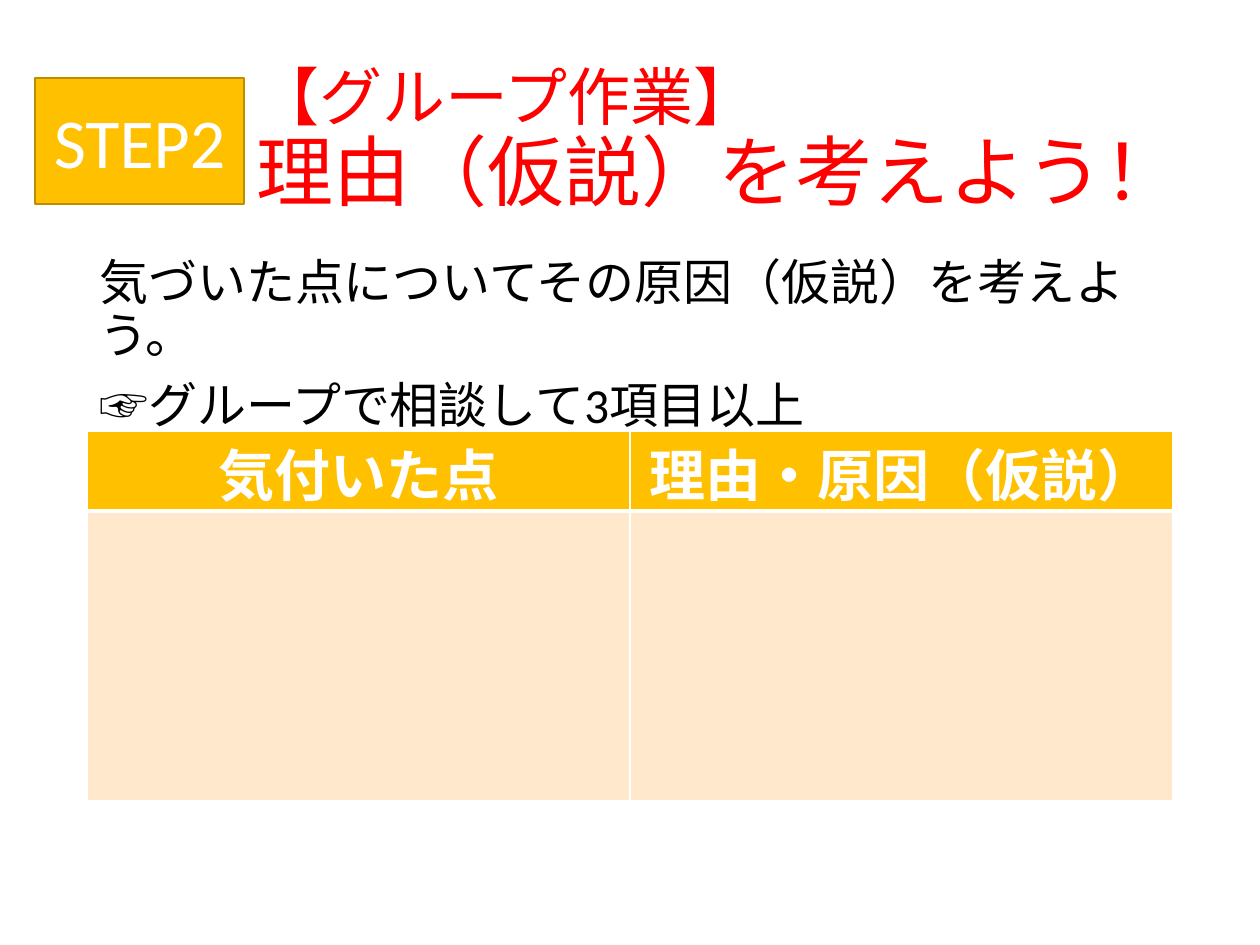
from lxml.etree import SubElement
from pptx import Presentation
from pptx.dml.color import RGBColor as Rgb
from pptx.enum.shapes import MSO_SHAPE as Kind
from pptx.enum.text import MSO_ANCHOR as Anchor, PP_ALIGN as Align
from pptx.oxml.ns import qn
from pptx.util import Emu, Pt

SCALE = 914400 / 126
HUES = {
    "red": "FF0000", "black": "000000", "white": "FFFFFF",
    "gold": "FFC000", "edge": "BD8E00", "cream": "FFE8CC",
}


def px(num):
    """Turn pixels into EMU."""
    return Emu(round(num * SCALE))


def hue(name):
    """Look up a named colour."""
    return Rgb.from_string(HUES[name])


def assign(item, **form):
    """Set each attribute of the item from the format values."""
    for key, val in form.items():
        setattr(item, key, val)


def paint(fill, name):
    """Give a fill one solid colour."""
    fill.solid()
    fill.fore_color.rgb = hue(name)


def write(para, text, size, tone, bold=False, **form):
    """Write one styled run, splitting lines at breaks, in a paragraph."""
    assign(para, **form)
    for i, line in enumerate(text.split("\n")):
        if i:
            para.add_line_break()
        run = para.add_run()
        run.text = line
        assign(run.font, name="Calibri", size=Pt(size), bold=bold)
        run.font.color.rgb = hue(tone)


def frame(slide, box, anchor):
    """Add a wrapping text box and return its frame."""
    area = slide.shapes.add_textbox(*map(px, box)).text_frame
    assign(area, word_wrap=True, vertical_anchor=anchor)
    return area


def title(slide, box):
    """Place the two-size red heading."""
    para = frame(slide, box, Anchor.MIDDLE).paragraphs[0]
    write(para, "【グループ作業】\n", 36, "red", line_spacing=0.9)
    write(para, "理由（仮説）を考えよう！", 44, "red")


def body(slide, box):
    """Place the task lines."""
    area = frame(slide, box, Anchor.TOP)
    lines = "気づいた点についてその原因（仮説）を考えよう。", "☞グループで相談して3項目以上"
    for i, line in enumerate(lines):
        para = area.add_paragraph() if i else area.paragraphs[0]
        write(para, line, 28, "black", line_spacing=0.9, space_before=Pt(10))


def badge(slide, box):
    """Place the step label."""
    shape = slide.shapes.add_shape(Kind.RECTANGLE, *map(px, box))
    shape.shadow.inherit = False
    paint(shape.fill, "gold")
    paint(shape.line.fill, "edge")
    shape.line.width = Pt(1)
    assign(shape.text_frame, word_wrap=True, vertical_anchor=Anchor.MIDDLE)
    write(shape.text_frame.paragraphs[0], "STEP2", 40, "white", alignment=Align.CENTER)


def border(cell, **sides):
    """Draw white cell borders of the given point widths."""
    props = cell._tc.get_or_add_tcPr()
    for side in "LRTB":
        line = SubElement(props, qn(f"a:ln{side}"), w=str(Pt(sides.get(side, 1))))
        solid = SubElement(line, qn("a:solidFill"))
        SubElement(solid, qn("a:srgbClr"), val=HUES["white"])


def grid(slide, box):
    """Place the worksheet table with its header row and blank row."""
    heads = "気付いた点", "理由・原因（仮説）"
    table = slide.shapes.add_table(2, len(heads), *map(px, box)).table
    top = 80
    for row, high in zip(table.rows, (top, box[3] - top)):
        row.height = px(high)
    for col, head in enumerate(heads):
        cell, blank = table.cell(0, col), table.cell(1, col)
        border(cell, B=3)
        border(blank, T=3)
        paint(cell.fill, "gold")
        paint(blank.fill, "cream")
        assign(cell, margin_left=px(9), margin_right=px(9), margin_top=0, margin_bottom=0)
        para = cell.text_frame.paragraphs[0]
        write(para, head, 32, "white", True, alignment=Align.CENTER)


def main():
    """Build and save the slide."""
    deck = Presentation()
    assign(deck, slide_width=px(1260), slide_height=px(945))
    slide = deck.slides.add_slide(deck.slide_layouts[6])
    title(slide, (244, 50, 929, 183))
    body(slide, (87, 252, 1086, 142))
    badge(slide, (35, 78, 209, 126))
    grid(slide, (87, 431, 1086, 370))
    deck.save("out.pptx")


if __name__ == "__main__":
    main()
